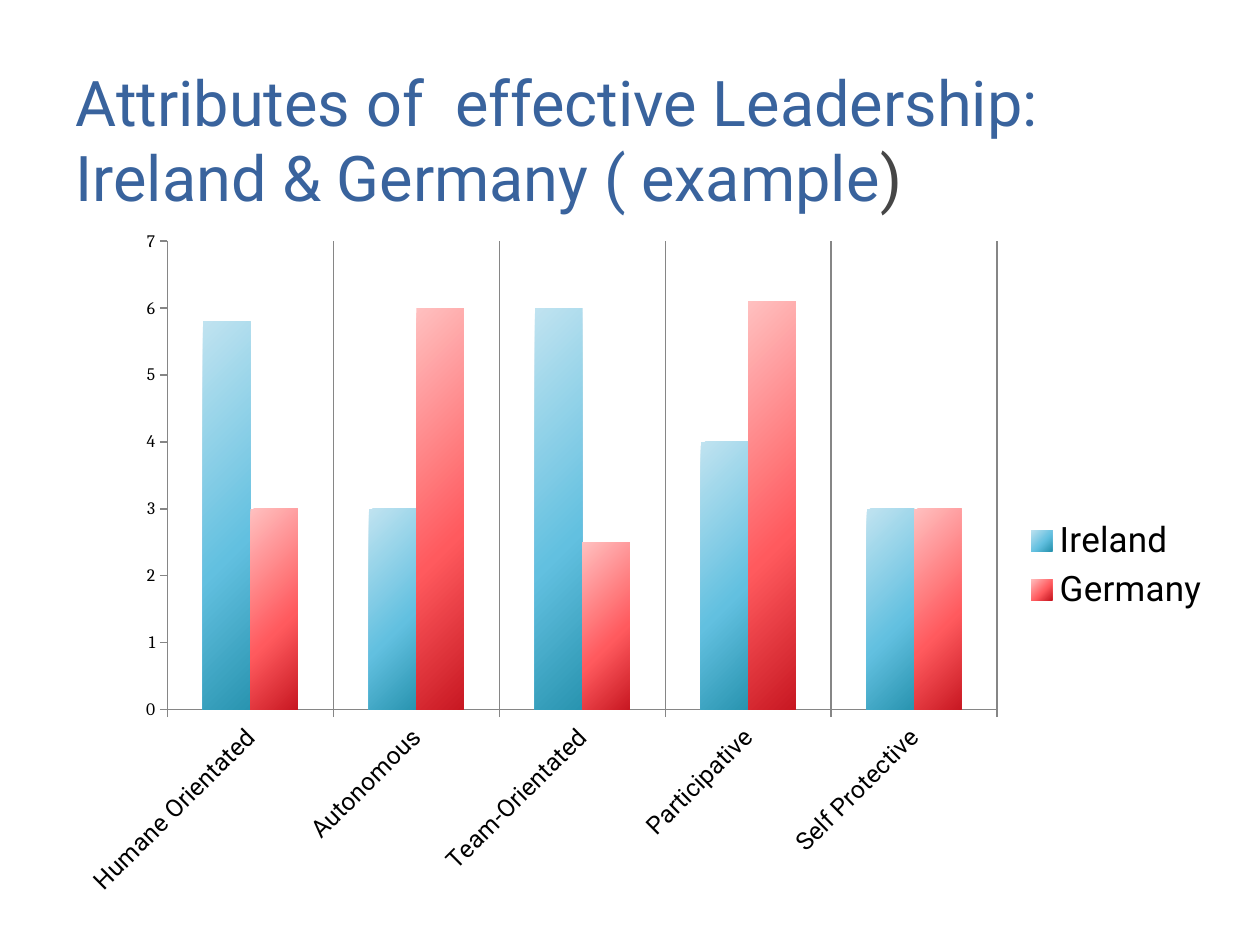
import pptx
import pptx.chart.data
import pptx.dml.color
import pptx.enum.chart
import pptx.enum.text
import pptx.oxml
import pptx.oxml.ns
import pptx.util
from pptx.dml.color import RGBColor
from pptx.util import Inches

BLUE = RGBColor(0x39, 0x63, 0x9D)
DARK_GREY = RGBColor(0x46, 0x46, 0x46)
AXIS_GREY = RGBColor(0x86, 0x86, 0x86)
BLACK = RGBColor(0, 0, 0)

HEADING_FONT = "Roboto"
NUMBER_FONT = "Cambria"

CATEGORIES = ["Humane Orientated", "Autonomous", "Team-Orientated",
              "Participative", "Self Protective"]
SCORES = {"Ireland": [5.8, 3, 6, 4, 3], "Germany": [3, 6, 2.5, 6.1, 3]}
# Light, middle and deep shade of each country's bars
SHADES = {
    "Ireland": [RGBColor(0xC0, 0xE3, 0xF0), RGBColor(0x62, 0xC0, 0xE0),
                RGBColor(0x29, 0x94, 0xB0)],
    "Germany": [RGBColor(0xFF, 0xC0, 0xC0), RGBColor(0xFF, 0x5A, 0x5E),
                RGBColor(0xC8, 0x18, 0x22)],
}
STOP_POSITIONS = [0, 60, 100]


def style_font(font, name, size, color):
    font.name = name
    font.size = pptx.util.Pt(size)
    font.color.rgb = color
    font.bold = False


def add_title(slide, runs):
    title = slide.shapes.title
    title.left, title.top = Inches(0.5), Inches(0.24)
    title.width, title.height = Inches(9), Inches(1.72)
    frame = title.text_frame
    frame.word_wrap = True
    frame.auto_size = pptx.enum.text.MSO_AUTO_SIZE.NONE
    frame.vertical_anchor = pptx.enum.text.MSO_ANCHOR.MIDDLE
    para = frame.paragraphs[0]
    para.alignment = pptx.enum.text.PP_ALIGN.LEFT
    for text, color in runs:
        span = para.add_run()
        span.text = text
        style_font(span.font, HEADING_FONT, 36, color)


def fill_with_gradient(series, shades):
    """Shade the bars diagonally from the top left to the bottom right."""
    fill = series.format.fill
    fill.gradient()
    fill.gradient_angle = 315
    stop_list = series.format.fill._fill._gradFill.find(pptx.oxml.ns.qn("a:gsLst"))
    for stop in list(stop_list):
        stop_list.remove(stop)
    for position, shade in zip(STOP_POSITIONS, shades):
        stop_list.append(pptx.oxml.parse_xml(
            f'<a:gs {pptx.oxml.ns.nsdecls("a")} pos="{position * 1000}">'
            f'<a:srgbClr val="{shade}"/></a:gs>'))


def style_axis(axis, font_name, size):
    axis.major_tick_mark = pptx.enum.chart.XL_TICK_MARK.OUTSIDE
    axis.minor_tick_mark = pptx.enum.chart.XL_TICK_MARK.NONE
    axis.format.line.color.rgb = AXIS_GREY
    axis.format.line.width = pptx.util.Pt(0.75)
    style_font(axis.tick_labels.font, font_name, size, BLACK)


def place_plot(chart, x, y, width, height):
    """Fix the inner plot area, in fractions of the chart."""
    plot_area = chart._chartSpace.chart.plotArea
    for layout in plot_area.findall(pptx.oxml.ns.qn("c:layout")):
        plot_area.remove(layout)
    sizes = "".join(f'<c:{tag} val="{value}"/>' for tag, value in
                    zip("xywh", (x, y, width, height)))
    plot_area.insert(0, pptx.oxml.parse_xml(
        f'<c:layout {pptx.oxml.ns.nsdecls("c")}><c:manualLayout>'
        '<c:layoutTarget val="inner"/><c:xMode val="edge"/><c:yMode val="edge"/>'
        f'{sizes}</c:manualLayout></c:layout>'))


def add_score_chart(slide):
    data = pptx.chart.data.CategoryChartData()
    data.categories = CATEGORIES
    for country, scores in SCORES.items():
        data.add_series(country, scores)
    chart = slide.shapes.add_chart(
        pptx.enum.chart.XL_CHART_TYPE.COLUMN_CLUSTERED,
        Inches(0.5), Inches(1.75), Inches(9.21), Inches(5.47), data).chart
    chart.has_title = False
    style_font(chart.font, NUMBER_FONT, 10, BLACK)
    place_plot(chart, 0.09, 0.03, 0.715, 0.68)

    plot = chart.plots[0]
    plot.gap_width = 150
    plot.overlap = 0
    plot.vary_by_categories = False
    for series in plot.series:
        fill_with_gradient(series, SHADES[series.name])

    category_axis = chart.category_axis
    style_axis(category_axis, HEADING_FONT, 14)
    category_axis.has_major_gridlines = True
    category_axis.major_gridlines.format.line.color.rgb = AXIS_GREY
    label_body = category_axis._element.find(
        pptx.oxml.ns.qn("c:txPr")).find(pptx.oxml.ns.qn("a:bodyPr"))
    label_body.set("rot", "-2700000")

    value_axis = chart.value_axis
    style_axis(value_axis, NUMBER_FONT, 10)
    value_axis.has_major_gridlines = False
    value_axis.minimum_scale, value_axis.maximum_scale = 0, 7
    value_axis.major_unit = 1

    chart.has_legend = True
    chart.legend.position = pptx.enum.chart.XL_LEGEND_POSITION.RIGHT
    chart.legend.include_in_layout = False
    style_font(chart.legend.font, HEADING_FONT, 20, BLACK)


def main():
    deck = pptx.Presentation()
    deck.slide_width, deck.slide_height = Inches(10), Inches(7.5)
    slide = deck.slides.add_slide(deck.slide_layouts.get_by_name("Title Only"))
    add_title(slide, [
        ("Attributes of  effective Leadership: Ireland & Germany ( example", BLUE),
        (")", DARK_GREY),
    ])
    add_score_chart(slide)
    deck.save("out.pptx")


if __name__ == "__main__":
    main()
